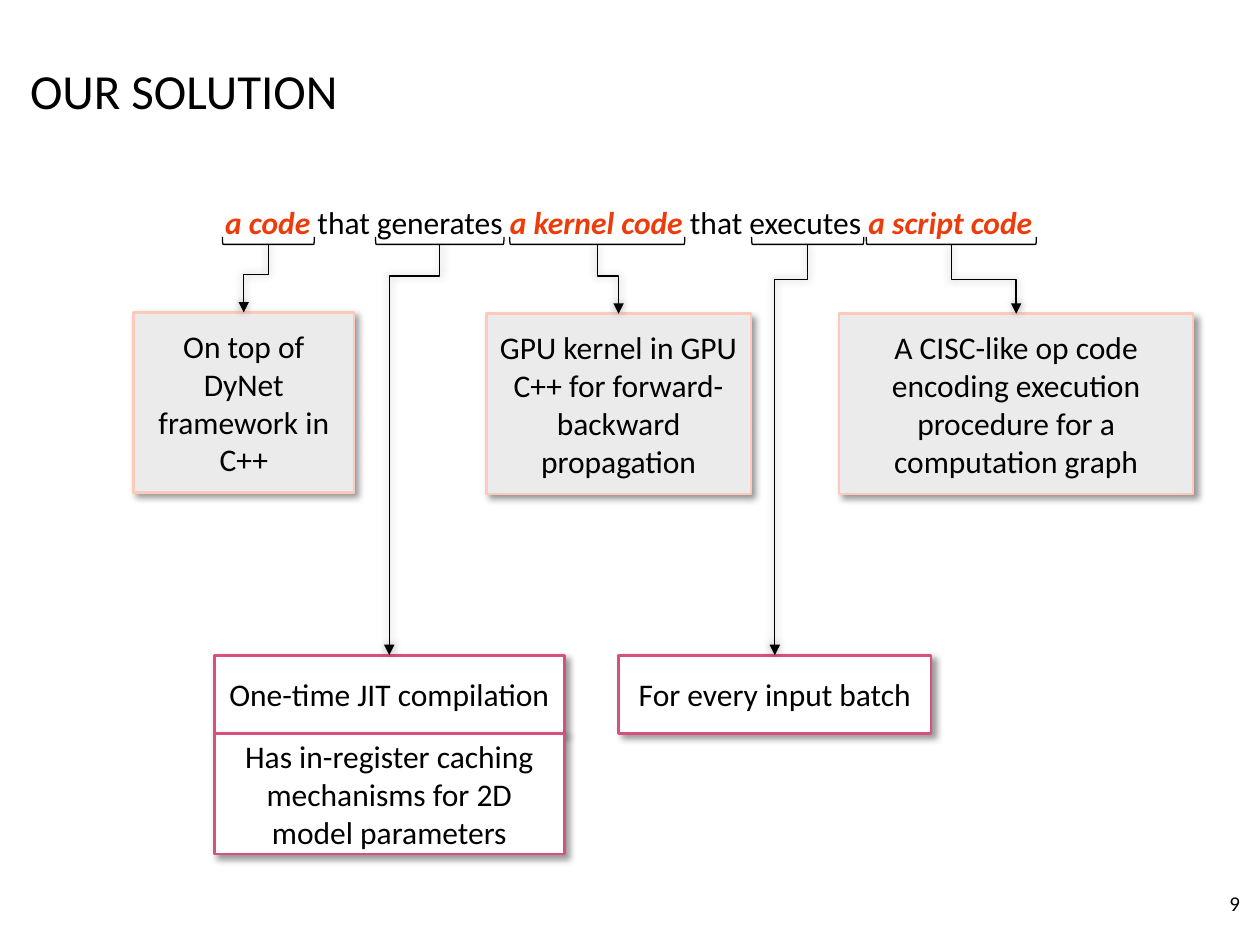
from dataclasses import dataclass

from lxml import etree
from pptx import Presentation
from pptx import util as u
from pptx.dml.color import RGBColor
from pptx.enum import shapes, text
from pptx.oxml import ns


@dataclass(frozen=True)
class Theme:
    font: str = "Calibri"
    ink: str = "000000"
    accent: str = "ED3C0B"
    code_fill: str = "EBEBEB"
    code_line: str = "FCC9BB"
    step_fill: str = "FFFFFF"
    step_line: str = "D8507E"
    title_size: int = 28
    body_size: int = 18
    number_size: int = 12
    box_line: float = 1.5
    thin_line: float = 0.75


class SlideBuilder:
    def __init__(self, slide, theme):
        self.slide = slide
        self.theme = theme

    def add_run(self, paragraph, words, size, color, emphasis=False):
        run = paragraph.add_run()
        run.text = words
        font = run.font
        font.name = self.theme.font
        font.size = u.Pt(size)
        font.bold = font.italic = emphasis
        font.color.rgb = RGBColor.from_string(color)

    def add_text(self, area, runs, size, align, anchor=text.MSO_ANCHOR.TOP):
        shape = self.slide.shapes.add_textbox(*map(u.Inches, area))
        frame = shape.text_frame
        frame.word_wrap = True
        frame.vertical_anchor = anchor
        paragraph = frame.paragraphs[0]
        paragraph.alignment = align
        for words, emphasis in runs:
            color = self.theme.accent if emphasis else self.theme.ink
            self.add_run(paragraph, words, size, color, emphasis)

    def set_line(self, line, color, width):
        line.color.rgb = RGBColor.from_string(color)
        line.width = u.Pt(width)

    def add_shadow(self, shape, blur, distance, angle):
        properties = shape._element.spPr
        for old in properties.findall(ns.qn("a:effectLst")):
            properties.remove(old)
        effects = etree.SubElement(properties, ns.qn("a:effectLst"))
        shadow = etree.SubElement(
            effects, ns.qn("a:outerShdw"), blurRad=str(u.Pt(blur)),
            dist=str(u.Pt(distance)), dir=str(angle * 60000),
            algn="ctr", rotWithShape="0")
        color = etree.SubElement(shadow, ns.qn("a:srgbClr"), val=self.theme.ink)
        etree.SubElement(color, ns.qn("a:alpha"), val="40000")

    def add_box(self, area, words, fill, line):
        shape = self.slide.shapes.add_shape(
            shapes.MSO_SHAPE.RECTANGLE, *map(u.Inches, area))
        shape.fill.solid()
        shape.fill.fore_color.rgb = RGBColor.from_string(fill)
        self.set_line(shape.line, line, self.theme.box_line)
        self.add_shadow(shape, 4, 3, 45)
        frame = shape.text_frame
        frame.word_wrap = True
        frame.vertical_anchor = text.MSO_ANCHOR.MIDDLE
        paragraph = frame.paragraphs[0]
        paragraph.alignment = text.PP_ALIGN.CENTER
        self.add_run(paragraph, words, self.theme.body_size, self.theme.ink)

    def add_bracket(self, center, bottom, span, depth=0.06):
        middle = bottom - depth / 2
        shape = self.slide.shapes.add_shape(
            shapes.MSO_SHAPE.RIGHT_BRACKET,
            u.Inches(center - depth / 2), u.Inches(middle - span / 2),
            u.Inches(depth), u.Inches(span))
        shape.rotation = 90
        shape.shadow.inherit = False
        shape.fill.background()
        self.set_line(shape.line, self.theme.ink, self.theme.thin_line)

    def add_elbow_arrow(self, start, end, bend):
        (x1, y1), (x2, y2) = start, end
        x, y = (x1 + x2) / 2, (y1 + y2) / 2
        half_run, half_drop = (x2 - x1) / 2, (y2 - y1) / 2
        connector = self.slide.shapes.add_connector(
            shapes.MSO_CONNECTOR.ELBOW,
            u.Inches(x + half_drop), u.Inches(y - half_run),
            u.Inches(x - half_drop), u.Inches(y + half_run))
        self.set_line(connector.line, self.theme.ink, self.theme.thin_line)
        properties = connector._element.spPr
        properties.find(ns.qn("a:xfrm")).set("rot", str(270 * 60000))
        guides = properties.find(ns.qn("a:prstGeom")).find(ns.qn("a:avLst"))
        ratio = round((bend - y1) / (y2 - y1) * 100000)
        etree.SubElement(guides, ns.qn("a:gd"), name="adj1", fmla=f"val {ratio}")
        etree.SubElement(properties.find(ns.qn("a:ln")),
                         ns.qn("a:tailEnd"), type="triangle")
        self.add_shadow(connector, 5, 0, 0)


def main():
    presentation = Presentation()
    presentation.slide_width = u.Inches(10)
    presentation.slide_height = u.Inches(7.5)
    theme = Theme()
    slide = presentation.slides.add_slide(presentation.slide_layouts[6])
    builder = SlideBuilder(slide, theme)

    builder.add_text((0.14, 0.1, 8.5, 1.22), [("OUR SOLUTION", False)],
                     theme.title_size, text.PP_ALIGN.LEFT, text.MSO_ANCHOR.MIDDLE)
    sentence = [("a code ", True), ("that generates ", False),
                ("a kernel code ", True), ("that executes ", False),
                ("a script code", True)]
    builder.add_text((0.28, 1.56, 9.42, 5.07), sentence,
                     theme.body_size, text.PP_ALIGN.CENTER)
    builder.add_text((9.47, 7.02, 0.47, 0.3), [("9", False)],
                     theme.number_size, text.PP_ALIGN.RIGHT)

    code = (theme.code_fill, theme.code_line)
    step = (theme.step_fill, theme.step_line)
    bracket_bottom = 1.94
    explanations = [
        ((1.06, 2.48, 1.75, 1.43), "On top of DyNet framework in C++",
         code, 2.13, 0.73, 2.18),
        ((3.86, 2.49, 2.1, 1.43),
         "GPU kernel in GPU C++ for forward-backward propagation",
         code, 4.74, 1.39, 2.19),
        ((6.66, 2.49, 2.81, 1.43),
         "A CISC-like op code encoding execution procedure for a computation graph",
         code, 7.55, 1.35, 2.22),
        ((1.7, 5.2, 2.78, 0.62), "One-time JIT compilation",
         step, 3.49, 1.02, 2.19),
        ((4.91, 5.2, 2.48, 0.62), "For every input batch",
         step, 6.41, 0.89, 2.22),
    ]
    for area, words, colors, center, span, bend in explanations:
        left, top, width, _ = area
        builder.add_box(area, words, *colors)
        builder.add_bracket(center, bracket_bottom, span)
        builder.add_elbow_arrow((center, bracket_bottom),
                                (left + width / 2, top), bend)
    builder.add_box((1.7, 5.82, 2.78, 0.96),
                    "Has in-register caching mechanisms for 2D model parameters", *step)

    presentation.save("out.pptx")


if __name__ == "__main__":
    main()
